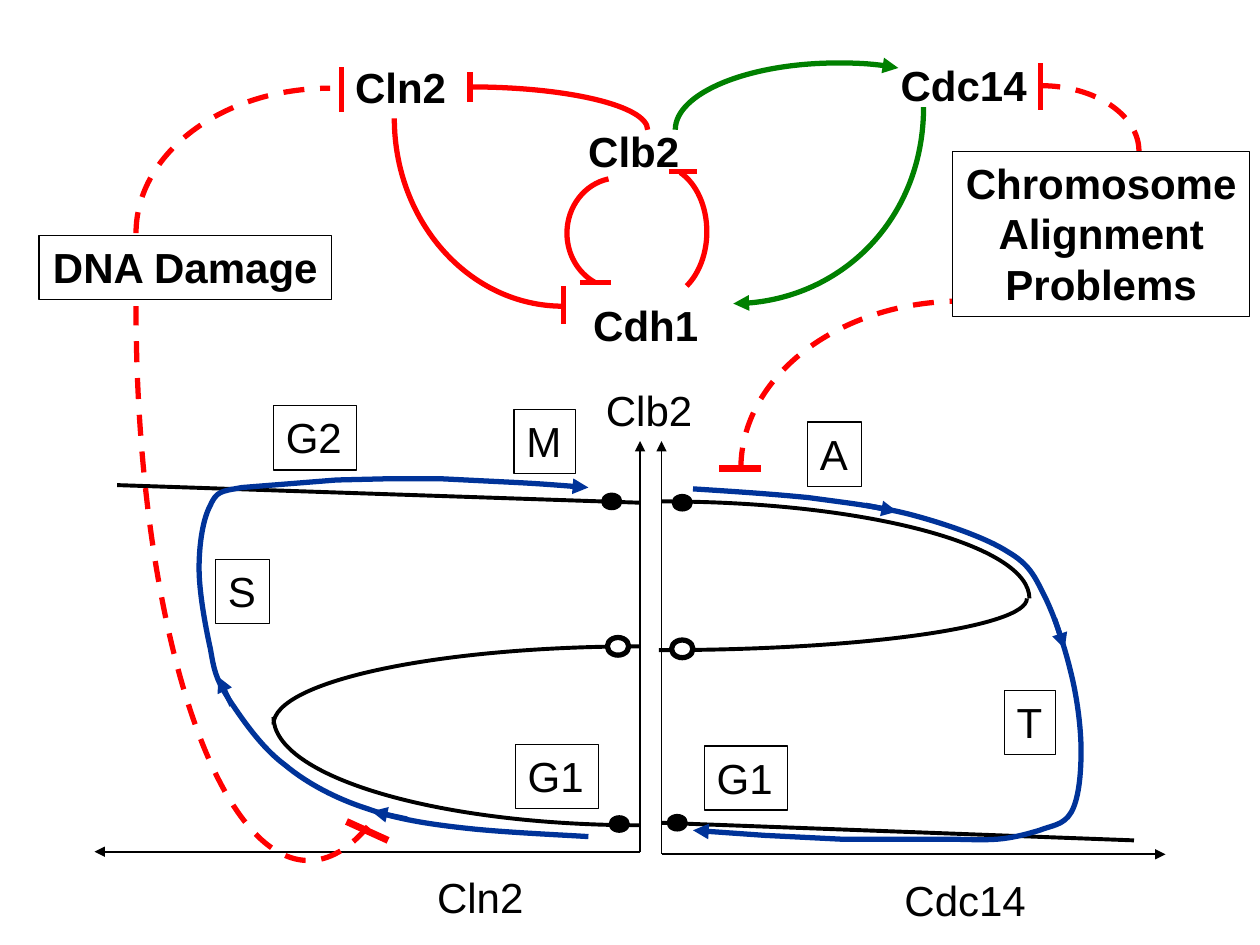
from lxml import etree
from pptx import Presentation
from pptx.dml.color import RGBColor
from pptx.enum.dml import MSO_LINE
from pptx.enum.shapes import MSO_CONNECTOR, MSO_SHAPE
from pptx.enum.text import MSO_ANCHOR, MSO_AUTO_SIZE, PP_ALIGN
from pptx.oxml.ns import qn
from pptx.util import Cm, Pt

STRAIGHT = MSO_CONNECTOR.STRAIGHT
RECT, OVAL = MSO_SHAPE.RECTANGLE, MSO_SHAPE.OVAL
LEFT, CENTER = PP_ALIGN.LEFT, PP_ALIGN.CENTER
TOP, GROW = MSO_ANCHOR.TOP, MSO_AUTO_SIZE.SHAPE_TO_FIT_TEXT
DASH = MSO_LINE.DASH
BLACK, WHITE, RED, GREEN, BLUE = "000000", "FFFFFF", "FF0000", "008000", "003399"
ARC = 0.5523

G1_TO_M = [
    (4.67, 6.64), (4.52, 6.63), (4.06, 6.61), (3.76, 6.58),
    (3.47, 6.55), (3.17, 6.51), (2.92, 6.42),
    (2.67, 6.34), (2.44, 6.22), (2.26, 6.07),
    (2.07, 5.93), (1.91, 5.69), (1.81, 5.54),
    (1.71, 5.38), (1.7, 5.32), (1.67, 5.15),
    (1.63, 4.97), (1.58, 4.7), (1.58, 4.51),
    (1.58, 4.32), (1.61, 4.12), (1.67, 4.01),
    (1.72, 3.9), (1.75, 3.9), (1.92, 3.87),
    (1.92, 3.87), (2.67, 3.81), (2.67, 3.81),
    (2.67, 3.81), (3.08, 3.8), (3.08, 3.8),
    (3.08, 3.8), (3.5, 3.8), (3.5, 3.8),
    (3.5, 3.8), (4.1, 3.83), (4.1, 3.83),
    (4.29, 3.84), (4.55, 3.86), (4.67, 3.87),
]
M_TO_G1 = [
    (5.5, 3.88), (5.81, 3.9), (6.12, 3.92), (6.42, 3.95),
    (6.71, 3.99), (6.99, 4.02), (7.25, 4.09),
    (7.51, 4.16), (7.83, 4.27), (8, 4.38),
    (8.17, 4.48), (8.21, 4.57), (8.29, 4.73),
    (8.37, 4.89), (8.45, 5.13), (8.5, 5.34),
    (8.55, 5.54), (8.58, 5.78), (8.58, 5.96),
    (8.58, 6.15), (8.56, 6.35), (8.5, 6.45),
    (8.44, 6.55), (8.35, 6.55), (8.25, 6.59),
    (8.15, 6.62), (8.04, 6.65), (7.92, 6.66),
    (7.79, 6.67), (7.64, 6.66), (7.5, 6.66),
    (7.5, 6.66), (7.08, 6.66), (7.08, 6.66),
    (6.94, 6.66), (6.84, 6.66), (6.67, 6.66),
    (6.67, 6.66), (6.07, 6.63), (6.07, 6.63),
    (6.07, 6.63), (5.5, 6.59), (5.5, 6.59),
]


def inch(value):
    """Return a length in inches as a Cm length."""
    return Cm(value * 2.54)


def rgb(color):
    """Turn a hex string into a colour."""
    return RGBColor.from_string(color)


def style_line(sp, color, width, arrow=None, dash=None):
    """Set colour, width, dash and an arrowhead ("head" or "tail")."""
    sp.line.color.rgb = rgb(color)
    sp.line.width = Pt(width)
    if dash:
        sp.line.dash_style = dash
    if arrow:
        ln = sp._element.spPr.find(qn("a:ln"))
        etree.SubElement(ln, qn(f"a:{arrow}End"), type="triangle")


def add_line(shapes, x1, y1, x2, y2, color, width, arrow=None):
    """Draw a straight line."""
    sp = shapes.add_connector(STRAIGHT, inch(x1), inch(y1), inch(x2), inch(y2))
    style_line(sp, color, width, arrow)
    etree.SubElement(sp._element.spPr, qn("a:effectLst"))


def add_curve(shapes, points, color, width, arrow=None, dash=None):
    """Draw an open chain of cubic curves, three points for each."""
    emu = [(inch(x), inch(y)) for x, y in points]
    builder = shapes.build_freeform(*emu[0])
    builder.add_line_segments(emu[1:], close=False)
    sp = builder.convert_to_shape()
    segments = list(sp._element.iter(qn("a:lnTo")))
    for i in range(0, len(segments), 3):
        cubic = etree.Element(qn("a:cubicBezTo"))
        segments[i].addprevious(cubic)
        for segment in segments[i:i + 3]:
            cubic.append(segment[0])
            segment.getparent().remove(segment)
    sp.fill.background()
    sp.shadow.inherit = False
    style_line(sp, color, width, arrow, dash)


def add_quarter(shapes, x1, y1, x2, y2, color, width, arrow=None, dash=None):
    """Draw a quarter ellipse that starts vertical and ends horizontal."""
    points = [(x1, y1), (x1, y1 + ARC * (y2 - y1)), (x2 - ARC * (x2 - x1), y2), (x2, y2)]
    add_curve(shapes, points, color, width, arrow, dash)


def write(sp, lines, bold, align):
    """Fill a shape with 24 pt lines of text."""
    tf = sp.text_frame
    tf.word_wrap = False
    tf.auto_size = GROW
    tf.vertical_anchor = TOP
    tf.text = "\n".join(lines)
    for p in tf.paragraphs:
        p.alignment = align
        p.font.name = "Arial"
        p.font.size = Pt(24)
        p.font.bold = bold
        p.font.color.rgb = rgb(BLACK)


def add_label(shapes, text, x, y, w, bold=False):
    """Add a one-line label without a frame."""
    sp = shapes.add_textbox(inch(x), inch(y), inch(w), inch(0.5))
    write(sp, [text], bold, LEFT)


def add_box(shapes, lines, x, y, w, h=0.51, bold=False, align=LEFT, fill=WHITE):
    """Add a framed text box."""
    sp = shapes.add_shape(RECT, inch(x), inch(y), inch(w), inch(h))
    sp.shadow.inherit = False
    if fill:
        sp.fill.solid()
        sp.fill.fore_color.rgb = rgb(fill)
    else:
        sp.fill.background()
    style_line(sp, BLACK, 0.75)
    write(sp, lines, bold, align)


def add_dot(shapes, x, y, stable):
    """Mark a steady state: solid if stable, open if not."""
    sp = shapes.add_shape(OVAL, inch(x), inch(y), inch(0.17), inch(0.14))
    sp.shadow.inherit = False
    sp.fill.solid()
    sp.fill.fore_color.rgb = rgb(BLACK if stable else WHITE)
    if stable:
        sp.line.fill.background()
    else:
        style_line(sp, BLACK, 3)


def add_diagrams(shapes):
    """Draw both bifurcation diagrams with the cell cycle path."""
    for x, bottom, end in ((5.08, 6.76, 0.75), (5.25, 6.78, 9.25)):
        add_line(shapes, x, 3.5, x, bottom, BLACK, 1, "head")
        add_line(shapes, x, bottom, end, bottom, BLACK, 1, "tail")
    for text, x, y, w in (("Clb2", 4.71, 3, 0.89), ("Cln2", 3.37, 6.87, 0.89),
                          ("Cdc14", 7.08, 6.89, 1.17)):
        add_label(shapes, text, x, y, w)
    for branch in ((2.17, 5.69, 5.08, 6.55), (2.17, 5.75, 5.08, 5.13),
                   (8.17, 4.75, 5.25, 3.98), (8.15, 4.75, 5.23, 5.16)):
        add_quarter(shapes, *branch, BLACK, 2.25)
    for branch in ((5.08, 3.99, 0.93, 3.85), (5.25, 6.53, 9, 6.67)):
        add_line(shapes, *branch, BLACK, 2.25)
    for path in (G1_TO_M, M_TO_G1):
        add_curve(shapes, path, BLUE, 3, "tail")
    for x, y, stable in ((4.77, 3.91, True), (5.33, 3.92, True), (4.83, 6.47, True),
                         (5.29, 6.46, True), (4.82, 5.06, False), (5.33, 5.08, False)):
        add_dot(shapes, x, y, stable)
    for phase, x, y, w in (("G1", 4.09, 5.91, 0.66), ("G1", 5.59, 5.92, 0.66),
                           ("S", 1.71, 4.44, 0.43), ("G2", 2.17, 3.22, 0.66),
                           ("M", 4.08, 3.25, 0.49), ("A", 6.41, 3.35, 0.43),
                           ("T", 7.97, 5.48, 0.41)):
        add_box(shapes, [phase], x, y, w)


def add_dna_damage(shapes):
    """Draw the DNA damage checkpoint."""
    add_box(shapes, ["DNA Damage"], 0.31, 1.87, 2.32, bold=True, align=CENTER, fill=None)
    add_quarter(shapes, 1.08, 1.85, 2.62, 0.7, RED, 3, dash=DASH)
    block = [(2.92, 6.56), (2.77, 6.74), (2.61, 6.83), (2.45, 6.83),
             (1.69, 6.83), (1.08, 4.86), (1.08, 2.43)]
    add_curve(shapes, block, RED, 3, dash=DASH)
    add_line(shapes, 2.75, 6.52, 3.08, 6.67, RED, 4)


def add_network(shapes):
    """Draw the regulatory network."""
    for text, x, y, w in (("Clb2", 4.57, 0.95, 0.92), ("Cdh1", 4.61, 2.33, 1.03),
                          ("Cln2", 2.72, 0.44, 0.92), ("Cdc14", 7.05, 0.42, 1.2)):
        add_label(shapes, text, x, y, w, bold=True)
    add_quarter(shapes, 5.14, 1.03, 3.73, 0.69, RED, 3)
    add_quarter(shapes, 3.13, 0.94, 4.47, 2.43, RED, 3)
    add_quarter(shapes, 7.33, 0.85, 5.82, 2.41, GREEN, 3, "tail")
    activation = [(7.13, 0.54), (6.98, 0.51), (6.81, 0.5), (6.65, 0.5),
                  (5.94, 0.5), (5.36, 0.74), (5.36, 1.03)]
    add_curve(shapes, activation, GREEN, 3, "head")
    for points in (
        [(4.83, 1.42), (4.64, 1.46), (4.5, 1.64), (4.5, 1.85),
         (4.5, 2.01), (4.58, 2.16), (4.72, 2.24)],
        [(5.45, 2.27), (5.55, 2.17), (5.61, 2.01), (5.61, 1.84),
         (5.61, 1.64), (5.53, 1.46), (5.4, 1.37)],
    ):
        add_curve(shapes, points, RED, 3)
    for bar in ((4.85, 2.24, 4.6, 2.24), (3.73, 0.81, 3.73, 0.57), (4.47, 2.57, 4.47, 2.27),
                (2.71, 0.89, 2.71, 0.53), (5.31, 1.36, 5.53, 1.36)):
        add_line(shapes, *bar, RED, 3)


def add_path_arrows(shapes):
    """Draw the arrowheads along the cell cycle path."""
    for arrow in ((1.84, 5.6, 1.73, 5.37), (8.37, 4.91, 8.45, 5.15),
                  (3.23, 6.5, 2.95, 6.44), (6.87, 4.01, 7.12, 4.06)):
        add_line(shapes, *arrow, BLUE, 3, "tail")


def add_alignment_problems(shapes):
    """Draw the chromosome alignment checkpoint."""
    add_quarter(shapes, 9.04, 1.2, 8.26, 0.68, RED, 3, dash=DASH)
    add_line(shapes, 8.26, 0.87, 8.26, 0.5, RED, 3)
    add_quarter(shapes, 5.88, 3.72, 7.63, 2.39, RED, 3, dash=DASH)
    add_line(shapes, 5.71, 3.72, 6.04, 3.72, RED, 4)
    add_box(shapes, ["Chromosome", "Alignment", "Problems"], 7.56, 1.2, 2.36, 1.31,
            bold=True, align=CENTER)


def main():
    """Build the slide and save it."""
    prs = Presentation()
    prs.slide_width, prs.slide_height = Cm(25.4), Cm(19.05)
    s = prs.slides.add_slide(prs.slide_layouts[6])
    add_diagrams(s.shapes)
    add_dna_damage(s.shapes)
    add_network(s.shapes.add_group_shape().shapes)
    add_path_arrows(s.shapes)
    add_alignment_problems(s.shapes.add_group_shape().shapes)
    prs.save("out.pptx")


if __name__ == "__main__":
    main()
